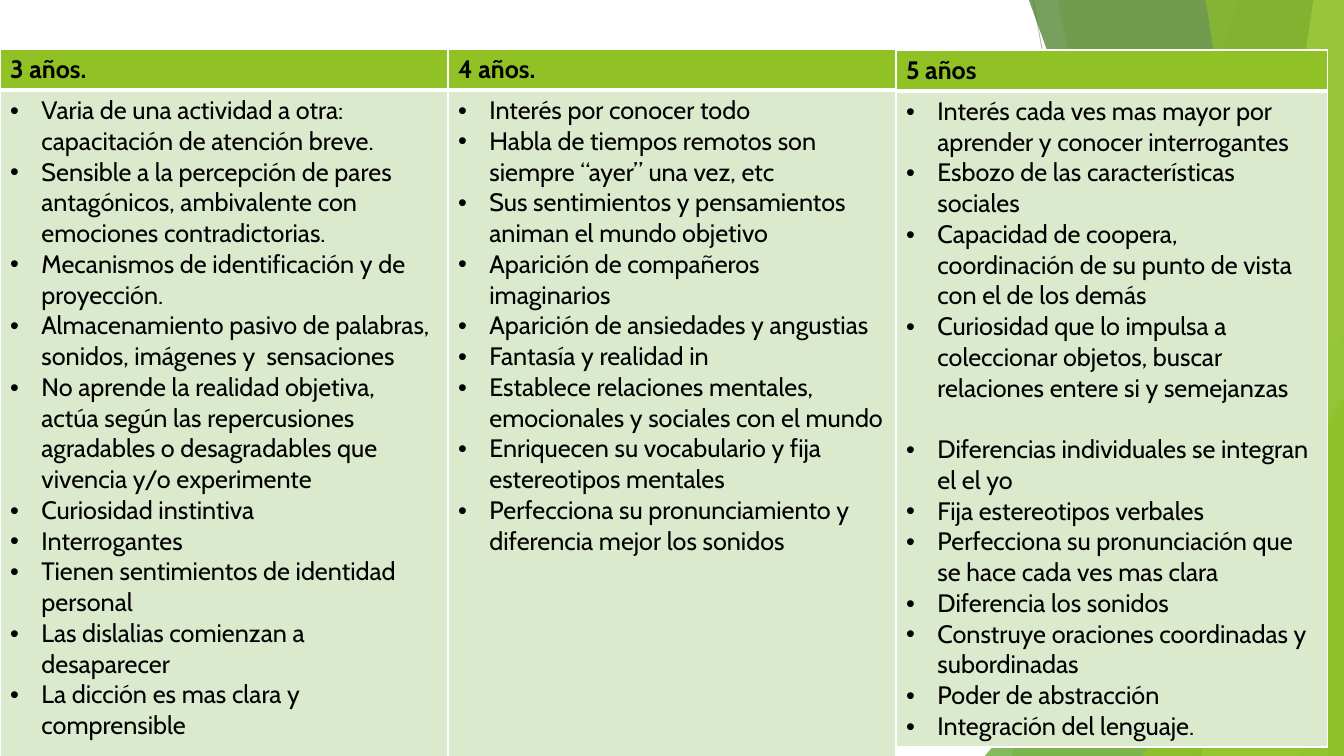
from dataclasses import dataclass

from lxml.etree import SubElement
from pptx import Presentation
from pptx.dml.color import RGBColor
from pptx.enum.shapes import MSO_CONNECTOR, MSO_SHAPE
from pptx.oxml.ns import qn
from pptx.util import Cm, Pt

PAGE_WIDTH, PAGE_HEIGHT = 33.87, 19.05


@dataclass(frozen=True)
class Theme:
    font: str = "Cabin"
    size: int = 18
    text: str = "000000"
    lime: str = "90C226"
    green: str = "54A021"
    forest: str = "3F7819"
    pale_lime: str = "C0E474"
    body: str = "DBE9CD"
    border: str = "FFFFFF"
    grey: str = "BFBFBF"
    light_grey: str = "D9D9D9"
    thin: float = 1
    thick: float = 3
    hairline: float = 0.75
    indent: float = 0.79
    gap: int = 22


class AgeSlide:
    def __init__(self, deck, theme):
        self.theme = theme
        self.page = deck.slides.add_slide(deck.slide_layouts[6])

    def line(self, start, end, color):
        line = self.page.shapes.add_connector(
            MSO_CONNECTOR.STRAIGHT, *(Cm(value) for value in start + end))
        line.line.color.rgb = RGBColor.from_string(color)
        line.line.width = Pt(self.theme.hairline)
        SubElement(line._element.spPr, qn("a:effectLst"))

    def paint(self, shape, color, opacity):
        shape.shadow.inherit = False
        shape.line.fill.background()
        shape.fill.solid()
        shape.fill.fore_color.rgb = RGBColor.from_string(color)
        tint = shape._element.spPr.find(qn("a:solidFill"))[0]
        SubElement(tint, qn("a:alpha"), val=str(opacity * 1000))

    def band(self, top, bottom, color, opacity):
        """Slanted band that reaches the right edge of the page."""
        outline = self.page.shapes.build_freeform(Cm(top), 0)
        outline.add_line_segments([
            (Cm(PAGE_WIDTH), 0), (Cm(PAGE_WIDTH), Cm(PAGE_HEIGHT)),
            (Cm(bottom), Cm(PAGE_HEIGHT))])
        self.paint(outline.convert_to_shape(), color, opacity)

    def triangle(self, left, top, width, apex, color, opacity):
        """Triangle that stands on the bottom edge of the page."""
        shape = self.page.shapes.add_shape(
            MSO_SHAPE.ISOSCELES_TRIANGLE, Cm(left), Cm(top),
            Cm(width), Cm(PAGE_HEIGHT - top))
        shape.adjustments[0] = apex
        self.paint(shape, color, opacity)

    def table(self, left, top, column_width, row_heights, columns):
        frame = self.page.shapes.add_table(
            2, len(columns), Cm(left), Cm(top),
            Cm(column_width * len(columns)), Cm(sum(row_heights)))
        table = frame.table
        table.first_row = table.horz_banding = False
        for row, height in zip(table.rows, row_heights):
            row.height = Cm(height)
        for index, (age, traits) in enumerate(columns):
            table.columns[index].width = Cm(column_width)
            self.header_cell(table.cell(0, index), age)
            self.body_cell(table.cell(1, index), traits)

    def header_cell(self, cell, age):
        self.cell_style(cell, self.theme.lime, self.theme.thin, self.theme.thick)
        cell.text_frame.text = age
        self.text_style(cell.text_frame, bold=True)

    def body_cell(self, cell, traits):
        self.cell_style(cell, self.theme.body, self.theme.thick, self.theme.thin)
        cell.text_frame.text = "\n".join(traits)
        self.text_style(cell.text_frame, bold=False)
        for para in cell.text_frame.paragraphs:
            self.bullet(para)
            if para.text in GAP_AFTER:
                para.space_after = Pt(self.theme.gap)

    def cell_style(self, cell, fill, top, bottom):
        thin = self.theme.thin
        for side, width in zip("LRTB", (thin, thin, top, bottom)):
            edge = SubElement(cell._tc.get_or_add_tcPr(), qn(f"a:ln{side}"),
                              w=str(Pt(width)))
            SubElement(SubElement(edge, qn("a:solidFill")),
                       qn("a:srgbClr"), val=self.theme.border)
        cell.fill.solid()
        cell.fill.fore_color.rgb = RGBColor.from_string(fill)

    def text_style(self, text_frame, bold):
        for para in text_frame.paragraphs:
            for span in para.runs:
                span.font.name = self.theme.font
                span.font.size = Pt(self.theme.size)
                span.font.bold = bold
                span.font.color.rgb = RGBColor.from_string(self.theme.text)

    def bullet(self, para):
        settings = para._p.get_or_add_pPr()
        settings.set("marL", str(Cm(self.theme.indent)))
        settings.set("indent", str(-Cm(self.theme.indent)))
        SubElement(settings, qn("a:buFont"), typeface="Arial")
        SubElement(settings, qn("a:buChar"), char="•")


THREE_YEARS = ("3 años.", [
    "Varia de una actividad a otra: capacitación de atención breve.",
    "Sensible a la percepción de pares antagónicos, ambivalente con emociones contradictorias.",
    "Mecanismos de identificación y de proyección.",
    "Almacenamiento pasivo de palabras, sonidos, imágenes y  sensaciones",
    "No aprende la realidad objetiva, actúa según las repercusiones agradables o "
    "desagradables que vivencia y/o experimente",
    "Curiosidad instintiva",
    "Interrogantes",
    "Tienen sentimientos de identidad personal",
    "Las dislalias comienzan a desaparecer",
    "La dicción es mas clara y comprensible",
])
FOUR_YEARS = ("4 años.", [
    "Interés por conocer todo",
    "Habla de tiempos remotos son  siempre “ayer” una vez, etc",
    "Sus sentimientos y pensamientos animan el mundo objetivo",
    "Aparición de compañeros imaginarios",
    "Aparición de ansiedades y angustias",
    "Fantasía y realidad in",
    "Establece relaciones mentales, emocionales y sociales con el mundo",
    "Enriquecen su vocabulario y fija estereotipos mentales",
    "Perfecciona su pronunciamiento y diferencia mejor los sonidos",
])
FIVE_YEARS = ("5 años", [
    "Interés cada ves mas mayor por aprender y conocer interrogantes",
    "Esbozo de las características sociales",
    "Capacidad de coopera, coordinación de su punto de vista con el de los demás",
    "Curiosidad que lo impulsa a coleccionar objetos, buscar relaciones entere si y semejanzas",
    "Diferencias individuales se integran el el yo",
    "Fija estereotipos verbales",
    "Perfecciona su pronunciación que se hace cada ves mas clara",
    "Diferencia los sonidos",
    "Construye oraciones coordinadas y subordinadas",
    "Poder de abstracción",
    "Integración del lenguaje.",
])
GAP_AFTER = {FIVE_YEARS[1][3]}


def main():
    deck = Presentation()
    deck.slide_width, deck.slide_height = Cm(PAGE_WIDTH), Cm(PAGE_HEIGHT)
    theme = Theme()
    slide = AgeSlide(deck, theme)

    # Green facets behind the tables
    slide.line((26.04, 0), (29.41, PAGE_HEIGHT), theme.grey)
    slide.line((PAGE_WIDTH, 10.24), (20.62, PAGE_HEIGHT), theme.light_grey)
    slide.band(31.19, 25.5, theme.lime, 30)
    slide.band(26.67, 30.05, theme.lime, 20)
    slide.triangle(24.82, 8.46, 9.05, 1, theme.green, 72)
    slide.band(25.93, 32.79, theme.forest, 70)
    slide.band(33.1, 30.28, theme.pale_lime, 70)
    slide.band(30.38, 33.48, theme.lime, 65)
    slide.triangle(28.8, 9.98, 5.07, 1, theme.lime, 80)
    slide.triangle(0, 11.15, 1.24, 0, theme.lime, 85)

    # Traits by age
    slide.table(0, 1.24, 11.29, (1.03, 17.78), [THREE_YEARS, FOUR_YEARS])
    slide.table(22.58, 1.26, 10.87, (1.03, 16.5), [FIVE_YEARS])

    deck.save("out.pptx")


if __name__ == "__main__":
    main()
